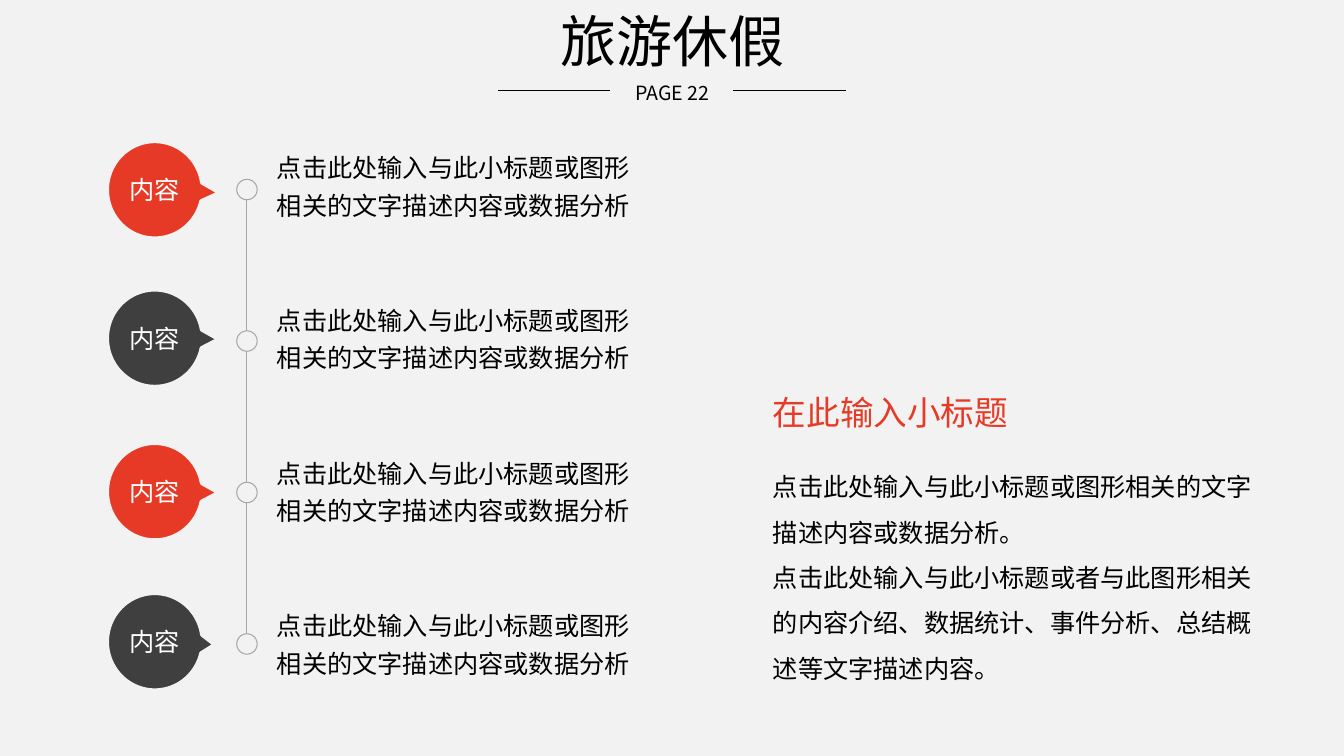
from lxml.etree import SubElement
from pptx import Presentation
from pptx.dml.color import RGBColor
from pptx.enum.shapes import MSO_CONNECTOR, MSO_SHAPE
from pptx.enum.text import MSO_ANCHOR, MSO_AUTO_SIZE, PP_ALIGN
from pptx.oxml.ns import qn
from pptx.util import Pt

SANS = "Noto Sans CJK SC"
RED, DARK, GREY, BLACK, WHITE, PAPER = "E63A26", "3F3F3F", "A6A6A6", "000000", "FFFFFF", "F2F2F2"


def paint(target, color):
    target.rgb = RGBColor.from_string(color)


def write(frame, texts, size, color, align=PP_ALIGN.LEFT, spacing=1.0, face=SANS):
    for index, text in enumerate(texts):
        para = frame.add_paragraph() if index else frame.paragraphs[0]
        para.text = text
        para.alignment = align
        para.line_spacing = spacing
        para.font.size = Pt(size)
        para.font.name = face
        para.font.fill.solid()
        paint(para.font.fill.fore_color, color)
        properties = para._p.pPr.find(qn("a:defRPr"))
        SubElement(properties, qn("a:ea")).set("typeface", face)


deck = Presentation()
deck.slide_width, deck.slide_height = Pt(960), Pt(540)
page = deck.slides.add_slide(deck.slide_layouts[5])
page.background.fill.solid()
paint(page.background.fill.fore_color, PAPER)

title = page.shapes.title
title.left, title.top, title.width, title.height = Pt(326.9), Pt(-2.9), Pt(306.7), Pt(69.1)
title.text_frame.word_wrap = False
title.text_frame.auto_size = MSO_AUTO_SIZE.NONE
title.text_frame.vertical_anchor = MSO_ANCHOR.MIDDLE
write(title.text_frame, ["旅游休假"], 40, BLACK, PP_ALIGN.CENTER, 0.9, "Noto Sans CJK JP")

ring_size, ring_left, ring_top, ring_step = 14.6, 169.1, 128.1, 108.2
axis = ring_left + ring_size / 2
ring_tops = [ring_top + ring_step * index for index in range(4)]

lines = [(355.8, 64.8, 436, 64.8, BLACK, 0.5), (523.8, 64.8, 604.3, 64.8, BLACK, 0.5)]
lines += [
    (axis, upper + ring_size, axis, lower, GREY, 0.75)
    for upper, lower in zip(ring_tops, ring_tops[1:])
]
for x1, y1, x2, y2, color, weight in lines:
    line = page.shapes.add_connector(MSO_CONNECTOR.STRAIGHT, Pt(x1), Pt(y1), Pt(x2), Pt(y2))
    paint(line.line.color, color)
    line.line.width = Pt(weight)
    SubElement(line._element.spPr, qn("a:effectLst"))

for top in ring_tops:
    ring = page.shapes.add_shape(
        MSO_SHAPE.OVAL, Pt(ring_left), Pt(top), Pt(ring_size), Pt(ring_size)
    )
    ring.shadow.inherit = False
    ring.fill.background()
    paint(ring.line.color, GREY)
    ring.line.width = Pt(0.75)

callouts = [
    (100.8, RED, 0.68, 0.03),
    (206.8, DARK, 0.67, 0.01),
    (316.4, RED, 0.67, 0.01),
    (423.6, DARK, 0.63, 0.03),
]
for top, color, tip_x, tip_y in callouts:
    callout = page.shapes.add_shape(
        MSO_SHAPE.OVAL_CALLOUT, Pt(76.4), Pt(top), Pt(68.4), Pt(69.6)
    )
    callout.adjustments[0], callout.adjustments[1] = tip_x, tip_y
    callout.shadow.inherit = False
    callout.fill.solid()
    paint(callout.fill.fore_color, color)
    paint(callout.line.color, PAPER)
    callout.line.width = Pt(3)
    callout.text_frame.word_wrap = False
    callout.text_frame.vertical_anchor = MSO_ANCHOR.MIDDLE
    write(callout.text_frame, ["内容"], 18, WHITE, PP_ALIGN.CENTER)

description = "点击此处输入与此小标题或图形相关的文字描述内容或数据分析"
details = [
    description + "。",
    "点击此处输入与此小标题或者与此图形相关的内容介绍、数据统计、事件分析、总结概述等文字描述内容。",
]
boxes = [
    (411.8, 54, 136.8, 24.5, ["PAGE 22"], 14, BLACK, PP_ALIGN.CENTER, 1.0),
    (545, 276.5, 368.6, 36, ["在此输入小标题"], 24, RED, PP_ALIGN.LEFT, 1.0),
    (545, 322.6, 368.6, 170.6, details, 18, BLACK, PP_ALIGN.LEFT, 1.5),
]
boxes += [
    (190.8, top, 271.4, 59, [description], 18, BLACK, PP_ALIGN.LEFT, 1.25)
    for top in (100.1, 208.8, 318.2, 427)
]
for left, top, width, height, texts, size, color, align, spacing in boxes:
    box = page.shapes.add_textbox(Pt(left), Pt(top), Pt(width), Pt(height))
    box.text_frame.word_wrap = True
    box.text_frame.auto_size = MSO_AUTO_SIZE.SHAPE_TO_FIT_TEXT
    write(box.text_frame, texts, size, color, align, spacing)

deck.save("out.pptx")
